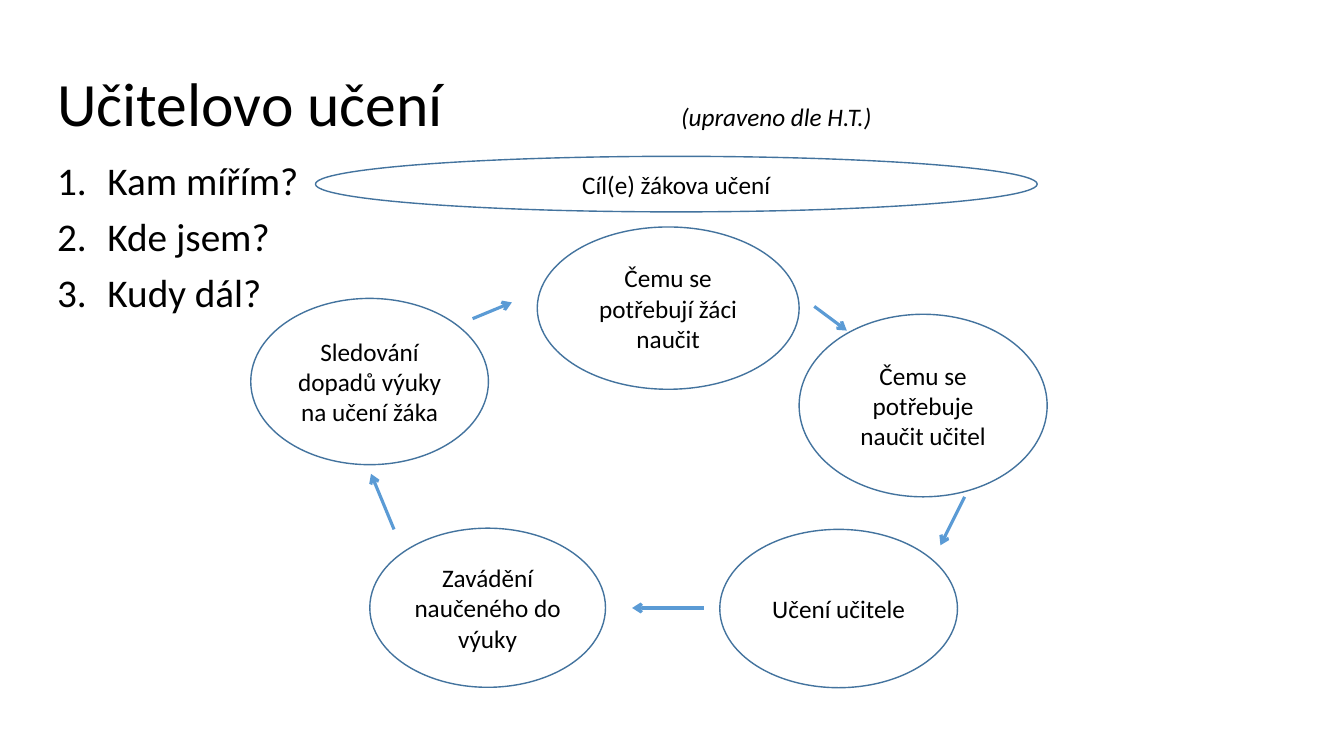
from lxml.etree import SubElement
from pptx import Presentation
from pptx.dml.color import RGBColor
from pptx.enum.shapes import MSO_CONNECTOR, MSO_SHAPE
from pptx.enum.text import MSO_ANCHOR, MSO_AUTO_SIZE, PP_ALIGN
from pptx.oxml.ns import qn
from pptx.util import Cm, Pt

BLACK = RGBColor(0x00, 0x00, 0x00)
WHITE = RGBColor(0xFF, 0xFF, 0xFF)
EDGE = RGBColor(0x43, 0x73, 0x9E)
BLUE = RGBColor(0x5B, 0x9B, 0xD5)


def style(run, size, italic=False):
    font = run.font
    font.name = "Calibri"
    font.size = Pt(size)
    font.italic = italic
    font.color.rgb = BLACK


deck = Presentation()
deck.slide_width = Cm(33.87)
deck.slide_height = Cm(19.05)
slide = deck.slides.add_slide(deck.slide_layouts[5])
shapes = slide.shapes

# Title, with the credit set at a tab stop
title = shapes.title
title.left, title.top = Cm(1.19), Cm(1.47)
title.width, title.height = Cm(27.18), Cm(2.44)
frame = title.text_frame
frame.auto_size = MSO_AUTO_SIZE.NONE
frame.vertical_anchor = MSO_ANCHOR.MIDDLE
para = frame.paragraphs[0]
para.alignment = PP_ALIGN.LEFT
para.line_spacing = 0.9
for text, size, italic in [
    ("Učitelovo učení\t", 44, False),
    ("(upraveno dle H.T.)", 18, True),
]:
    run = para.add_run()
    run.text = text
    style(run, size, italic)
tabs = SubElement(para._p.get_or_add_pPr(), qn("a:tabLst"))
SubElement(tabs, qn("a:tab"), pos=str(Cm(15.72)), algn="l")

# Numbered questions
box = shapes.add_textbox(Cm(1.19), Cm(3.94), Cm(29.29), Cm(14.07))
frame = box.text_frame
frame.word_wrap = True
frame.text = "Kam mířím?\nKde jsem?\nKudy dál?"
for para in frame.paragraphs:
    para.line_spacing = 0.9
    para.space_before = Pt(10)
    style(para.runs[0], 28)
    props = para._p.get_or_add_pPr()
    props.set("marL", str(Cm(1.27)))
    props.set("indent", str(-Cm(1.27)))
    SubElement(props, qn("a:buFont"), typeface="+mj-lt")
    SubElement(props, qn("a:buAutoNum"), type="arabicPeriod")

# Steps of the cycle, clockwise from the top, then the goal above them
ovals = [
    ("Čemu se potřebují žáci naučit", 13.54, 5.72, 6.6, 4.09),
    ("Čemu se potřebuje naučit učitel", 20.14, 7.92, 6.25, 4.6),
    ("Učení učitele", 18.14, 13.34, 5.99, 3.99),
    ("Zavádění naučeného do výuky", 9.32, 13.31, 5.94, 4.01),
    ("Sledování dopadů výuky na učení žáka", 6.32, 7.52, 5.99, 4.19),
    ("Cíl(e) žákova učení", 7.95, 3.94, 18.19, 1.4),
]
for text, *place in ovals:
    oval = shapes.add_shape(MSO_SHAPE.OVAL, *map(Cm, place))
    oval.shadow.inherit = False
    oval.fill.solid()
    oval.fill.fore_color.rgb = WHITE
    oval.line.color.rgb = EDGE
    oval.line.width = Pt(1)
    frame = oval.text_frame
    frame.word_wrap = True
    frame.vertical_anchor = MSO_ANCHOR.MIDDLE
    frame.text = text
    para = frame.paragraphs[0]
    para.alignment = PP_ALIGN.CENTER
    style(para.runs[0], 18)

# Arrows between the steps: start x, y, end x, y
arrows = [
    (20.52, 7.72, 21.34, 8.33),
    (24.31, 12.52, 23.7, 13.74),
    (17.73, 15.32, 15.93, 15.32),
    (9.93, 13.34, 9.35, 11.94),
    (11.91, 8.03, 12.9, 7.62),
]
for ends in arrows:
    arrow = shapes.add_connector(MSO_CONNECTOR.STRAIGHT, *map(Cm, ends))
    arrow.line.color.rgb = BLUE
    arrow.line.width = Pt(2.25)
    SubElement(arrow.line._get_or_add_ln(), qn("a:tailEnd"), type="arrow")
    SubElement(arrow._element.spPr, qn("a:effectLst"))

deck.save("out.pptx")
